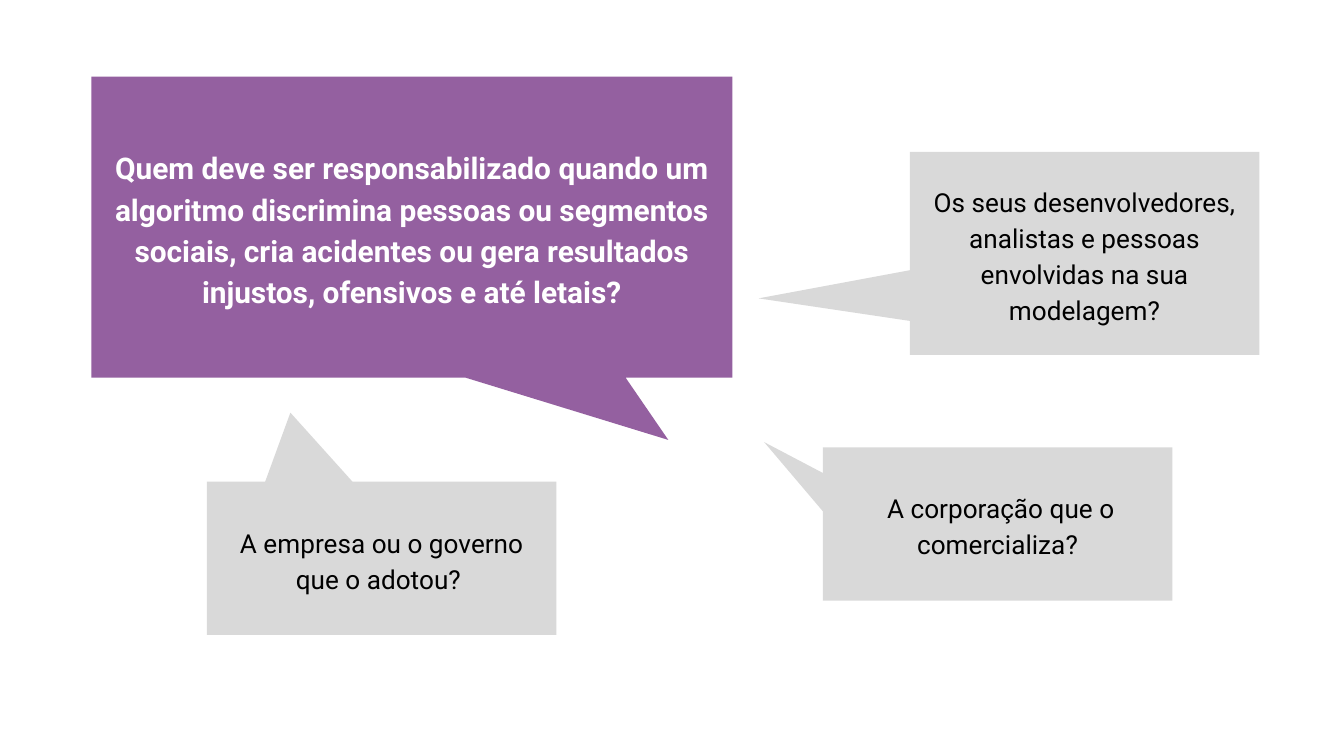
from pptx import Presentation
from pptx.dml.color import RGBColor
from pptx.enum.shapes import MSO_SHAPE
from pptx.enum.text import MSO_ANCHOR, PP_ALIGN
from pptx.util import Inches, Pt

PURPLE = RGBColor(0x94, 0x60, 0xA0)
GRAY = RGBColor(0xD9, 0xD9, 0xD9)
WHITE = RGBColor(0xFF, 0xFF, 0xFF)
BLACK = RGBColor(0, 0, 0)

FONT = "Roboto"
SLIDE_WIDTH = Inches(10)
SLIDE_HEIGHT = SLIDE_WIDTH * 9 // 16
PADDING = Inches(0.1)

# Places and sizes are percentages of the slide's width and height.
ANSWER_WIDTH = 26
SHORT_ANSWER_HEIGHT = 20.27

QUESTION = (
    "Quem deve ser responsabilizado quando um algoritmo discrimina pessoas "
    "ou segmentos sociais, cria acidentes ou gera resultados injustos, "
    "ofensivos e até letais?"
)

# Text, left, top, height, tip of the pointer
ANSWERS = [
    ("Os seus desenvolvedores, analistas e pessoas envolvidas na sua modelagem?",
     67.7, 20.09, 26.84, (56.44, 39.47)),
    ("A empresa ou o governo que o adotou? ",
     15.4, 63.73, SHORT_ANSWER_HEIGHT, (21.61, 54.59)),
    (" A corporação que o comercializa?",
     61.23, 59.2, SHORT_ANSWER_HEIGHT, (56.86, 58.49)),
]


def across(percent):
    return round(SLIDE_WIDTH * percent / 100)


def down(percent):
    return round(SLIDE_HEIGHT * percent / 100)


def add_callout(page, text, left, top, width, height, tip, fill, color, size,
                bold=False):
    """Add a speech box whose pointer ends at tip, an (x, y) place on the slide."""
    box = page.shapes.add_shape(
        MSO_SHAPE.RECTANGULAR_CALLOUT,
        across(left), down(top), across(width), down(height))
    # The pointer is set as shares of the box, measured from its centre.
    box.adjustments[0] = (tip[0] - left) / width - 0.5
    box.adjustments[1] = (tip[1] - top) / height - 0.5
    box.shadow.inherit = False
    box.fill.solid()
    box.fill.fore_color.rgb = fill
    box.line.fill.background()

    frame = box.text_frame
    frame.word_wrap = True
    frame.vertical_anchor = MSO_ANCHOR.MIDDLE
    frame.margin_left = frame.margin_right = PADDING
    frame.margin_top = frame.margin_bottom = PADDING

    para = frame.paragraphs[0]
    para.text = text
    para.alignment = PP_ALIGN.CENTER
    para.line_spacing = 1.15
    para.font.name = FONT
    para.font.size = Pt(size)
    para.font.bold = bold
    para.font.color.rgb = color


def main():
    deck = Presentation()
    deck.slide_width, deck.slide_height = SLIDE_WIDTH, SLIDE_HEIGHT
    page = deck.slides.add_slide(deck.slide_layouts.get_by_name("Blank"))

    add_callout(page, QUESTION, 6.8, 10.13, 47.7, 39.82, (49.73, 58.2),
                PURPLE, WHITE, size=16, bold=True)
    for text, left, top, height, tip in ANSWERS:
        add_callout(page, text, left, top, ANSWER_WIDTH, height, tip,
                    GRAY, BLACK, size=14)

    deck.save("out.pptx")


if __name__ == "__main__":
    main()
